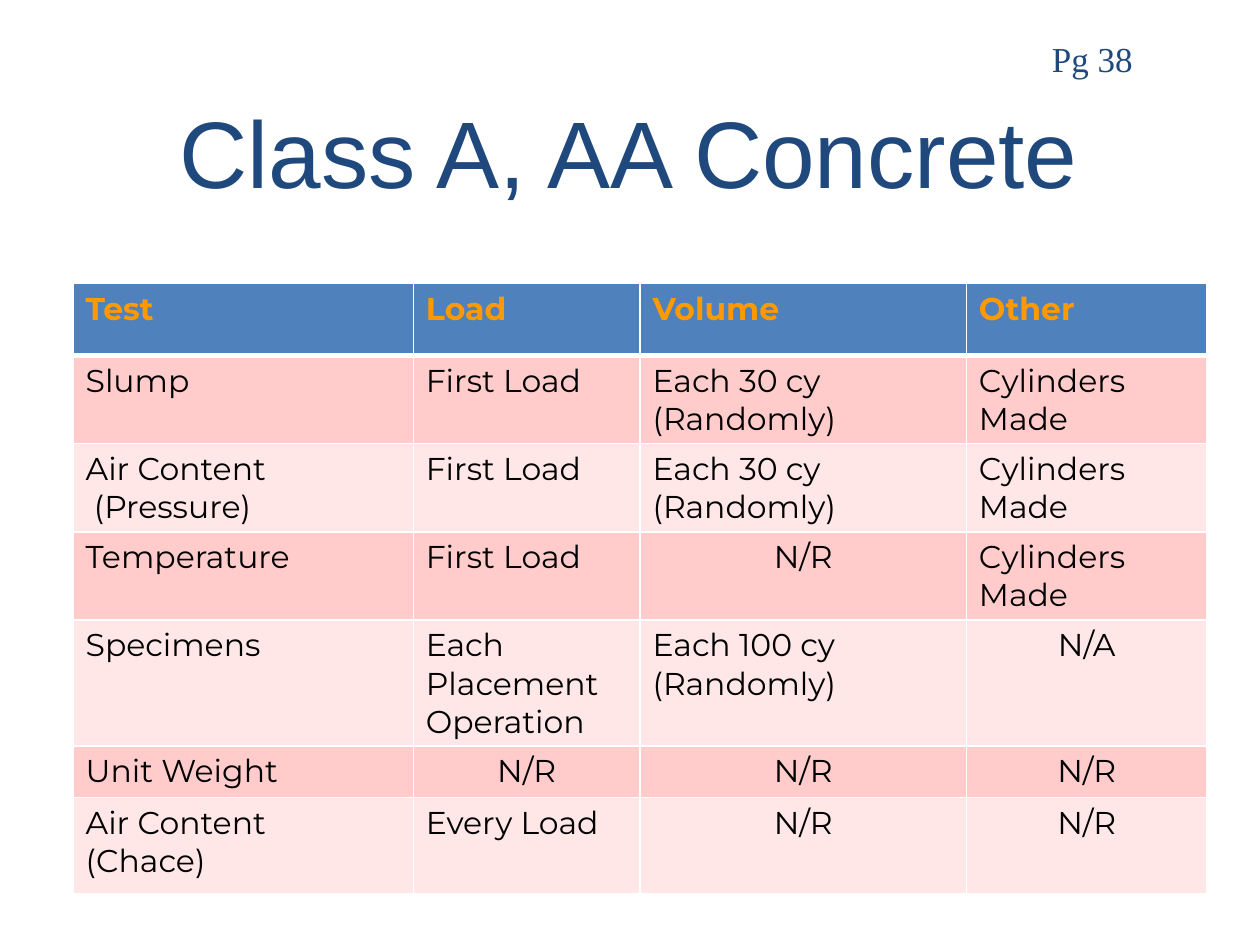
"""Build the concrete testing frequency slide."""
import pptx
import pptx.dml.color
import pptx.enum.text
import pptx.oxml
import pptx.oxml.ns
import pptx.util

Inches = pptx.util.Inches
Pt = pptx.util.Pt
ALIGN = pptx.enum.text.PP_ALIGN
ANCHOR = pptx.enum.text.MSO_ANCHOR

COLORS = {
    "navy": "1F497D",
    "orange": "FF9900",
    "black": "000000",
    "header": "4F81BD",
    "odd": "FFCBCB",
    "even": "FFE7E7",
    "border": "FFFFFF",
}
ROWS = [
    ("Test", "Load", "Volume", "Other"),
    ("Slump", "First Load", "Each 30 cy (Randomly)", "Cylinders Made"),
    ("Air Content\n (Pressure)", "First Load", "Each 30 cy (Randomly)", "Cylinders Made"),
    ("Temperature", "First Load", "N/R", "Cylinders Made"),
    ("Specimens", "Each Placement Operation", "Each 100 cy (Randomly)", "N/A"),
    ("Unit Weight", "N/R", "N/R", "N/R"),
    ("Air Content\n(Chace)", "Every Load", "N/R", "N/R"),
]
COLUMN_WIDTHS = [2.7, 1.8, 2.59, 1.91]
ROW_HEIGHTS = [0.57, 0.7, 0.7, 0.7, 1, 0.41, 0.76]
CENTERED = {"N/R", "N/A"}


def color(name):
    return pptx.dml.color.RGBColor.from_string(COLORS[name])


def style(paragraph, font_name, size, color_name, align=ALIGN.LEFT, bold=False):
    paragraph.alignment = align
    font = paragraph.font
    font.name = font_name
    font.size = Pt(size)
    font.bold = bold
    font.color.rgb = color(color_name)


def add_label(page, text, place, font_name, size, align, anchor):
    box = page.shapes.add_textbox(*map(Inches, place))
    frame = box.text_frame
    frame.word_wrap = True
    frame.vertical_anchor = anchor
    frame.text = text
    style(frame.paragraphs[0], font_name, size, "navy", align)


def add_borders(cell, row_index):
    widths = {"L": 1, "R": 1, "T": 3 if row_index == 1 else 1, "B": 3 if row_index == 0 else 1}
    properties = cell._tc.get_or_add_tcPr()
    for side, width in widths.items():
        properties.append(pptx.oxml.parse_xml(
            f'<a:ln{side} {pptx.oxml.ns.nsdecls("a")} w="{Pt(width)}"><a:solidFill>'
            f'<a:srgbClr val="{COLORS["border"]}"/></a:solidFill></a:ln{side}>'))


def fill_cell(cell, text, row_index):
    is_header = row_index == 0
    add_borders(cell, row_index)
    cell.fill.solid()
    cell.fill.fore_color.rgb = color("header" if is_header else "odd" if row_index % 2 else "even")
    cell.text = text
    align = ALIGN.CENTER if text in CENTERED else ALIGN.LEFT
    for paragraph in cell.text_frame.paragraphs:
        style(paragraph, "Montserrat", 18, "orange" if is_header else "black", align, is_header)


def add_test_table(page):
    frame = page.shapes.add_table(
        len(ROWS), len(COLUMN_WIDTHS), Inches(0.58), Inches(2.25),
        Inches(sum(COLUMN_WIDTHS)), Inches(sum(ROW_HEIGHTS)))
    table = frame.table
    for column, width in zip(table.columns, COLUMN_WIDTHS):
        column.width = Inches(width)
    for row, height in zip(table.rows, ROW_HEIGHTS):
        row.height = Inches(height)
    for row_index, texts in enumerate(ROWS):
        for column_index, text in enumerate(texts):
            fill_cell(table.cell(row_index, column_index), text, row_index)


def main():
    deck = pptx.Presentation()
    deck.slide_width = Inches(10)
    deck.slide_height = Inches(7.5)
    page = deck.slides.add_slide(deck.slide_layouts[6])
    add_label(page, "Class A, AA Concrete", (0.75, 0.62, 8.48, 1.15),
              "Arial", 54, ALIGN.CENTER, ANCHOR.MIDDLE)
    add_test_table(page)
    add_label(page, "Pg 38", (8.25, 0.25, 1.33, 0.43),
              "Times New Roman", 20, ALIGN.LEFT, ANCHOR.TOP)
    deck.save("out.pptx")


if __name__ == "__main__":
    main()
